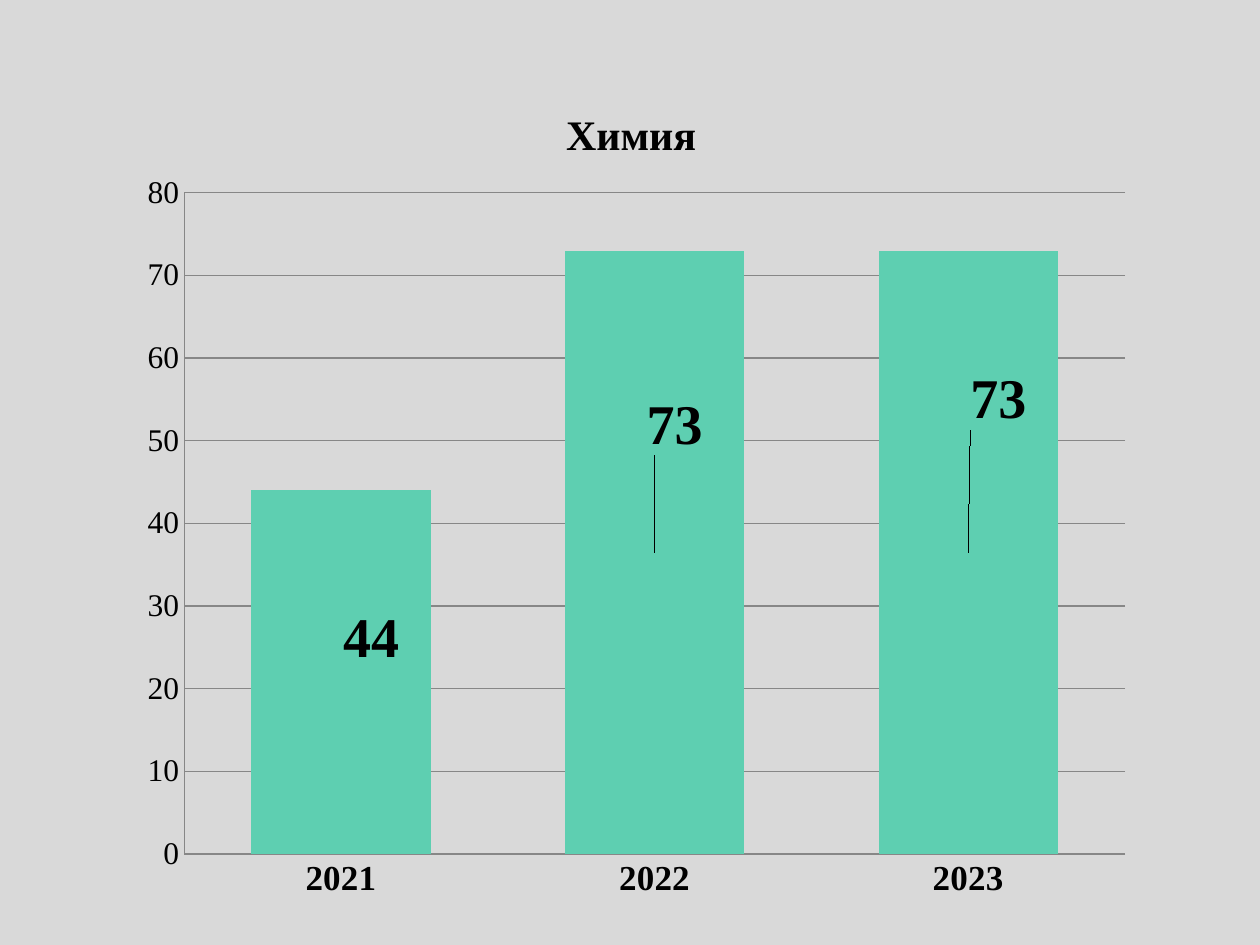
from lxml.etree import SubElement as Sub
from pptx import Presentation
from pptx.chart.data import CategoryChartData as Data
from pptx.dml.color import RGBColor as RGB
from pptx.enum.chart import XL_CHART_TYPE as Kind, XL_LABEL_POSITION as Pos, XL_TICK_MARK as Tick
from pptx.oxml.ns import qn
from pptx.util import Inches, Pt

TITLE = "Химия"
YEARS = ["2021", "2022", "2023"]
SCORES = [44, 73, 73]
SHIFTS = [(0.03, -0.04), (0.02, -0.15), (0.03, -0.18)]
BOX = (0.98, 0.52, 8.03, 6.73)
PLOT = {"layoutTarget": "inner", "xMode": "edge", "yMode": "edge",
        "x": 0.056, "y": 0.153, "w": 0.925, "h": 0.775}
HEAD = {"xMode": "edge", "yMode": "edge", "x": 0.43, "y": 0.04}
PLOT = {key: round(val, 2) if key in "xywh" else val for key, val in PLOT.items()}
THEME = {
    "back": RGB.from_string("D9D9D9"),
    "bar": RGB.from_string("5ECFB1"),
    "line": RGB.from_string("878787"),
    "text": RGB.from_string("000000"),
    "face": "Times New Roman",
    "base": {"size": Pt(18), "bold": False},
    "years": {"size": Pt(20), "bold": True},
    "title": {"size": Pt(24), "bold": True},
    "score": {"size": Pt(32), "bold": True},
}
AXIS = {"major_tick_mark": Tick.NONE, "minor_tick_mark": Tick.NONE}
SCALE = {"minimum_scale": 0, "maximum_scale": 80, "major_unit": 10,
         "has_major_gridlines": True}


def apply(item, vals):
    for key, val in vals.items():
        setattr(item, key, val)


def style(font, role):
    apply(font, {"name": THEME["face"], **THEME[role]})
    font.color.rgb = THEME["text"]


def rule(line):
    line.color.rgb = THEME["line"]
    line.width = Pt(0.75)


def place(node, spot, vals):
    for old in node.findall(qn("c:layout")):
        node.remove(old)
    layout = Sub(node, qn("c:layout"))
    node.insert(spot, layout)
    manual = Sub(layout, qn("c:manualLayout"))
    for key, val in vals.items():
        Sub(manual, qn(f"c:{key}")).set("val", str(val))


def main():
    deck = Presentation()
    apply(deck, {"slide_width": Inches(10), "slide_height": Inches(7.5)})
    slide = deck.slides.add_slide(deck.slide_layouts[6])
    fill = slide.background.fill
    fill.solid()
    fill.fore_color.rgb = THEME["back"]

    data = Data()
    data.categories = YEARS
    data.add_series("Series 1", SCORES)
    frame = slide.shapes.add_chart(Kind.COLUMN_STACKED, *map(Inches, BOX), data)
    chart = frame.chart
    apply(chart, {"has_legend": False, "has_title": True})
    style(chart.font, "base")

    text = chart.chart_title.text_frame
    text.text = TITLE
    style(text.paragraphs[0].runs[0].font, "title")
    place(chart.chart_title._element, 1, HEAD)
    place(chart._chartSpace.chart.plotArea, 0, PLOT)

    for axis, role in ((chart.category_axis, "years"), (chart.value_axis, "base")):
        apply(axis, AXIS)
        style(axis.tick_labels.font, role)
        rule(axis.format.line)
    apply(chart.value_axis, SCALE)
    rule(chart.value_axis.major_gridlines.format.line)

    plot = chart.plots[0]
    apply(plot, {"gap_width": 75, "overlap": 100, "vary_by_categories": False})
    bars = plot.series[0]
    bars.format.fill.solid()
    bars.format.fill.fore_color.rgb = THEME["bar"]
    for num in range(len(SHIFTS)):
        label = bars.points[num].data_label
        style(label.font, "score")
        label.position = Pos.CENTER
    for node, (x, y) in zip(bars._element.iter(qn("c:dLbl")), SHIFTS):
        place(node, 1, {"x": x, "y": y})

    deck.save("out.pptx")


if __name__ == "__main__":
    main()
